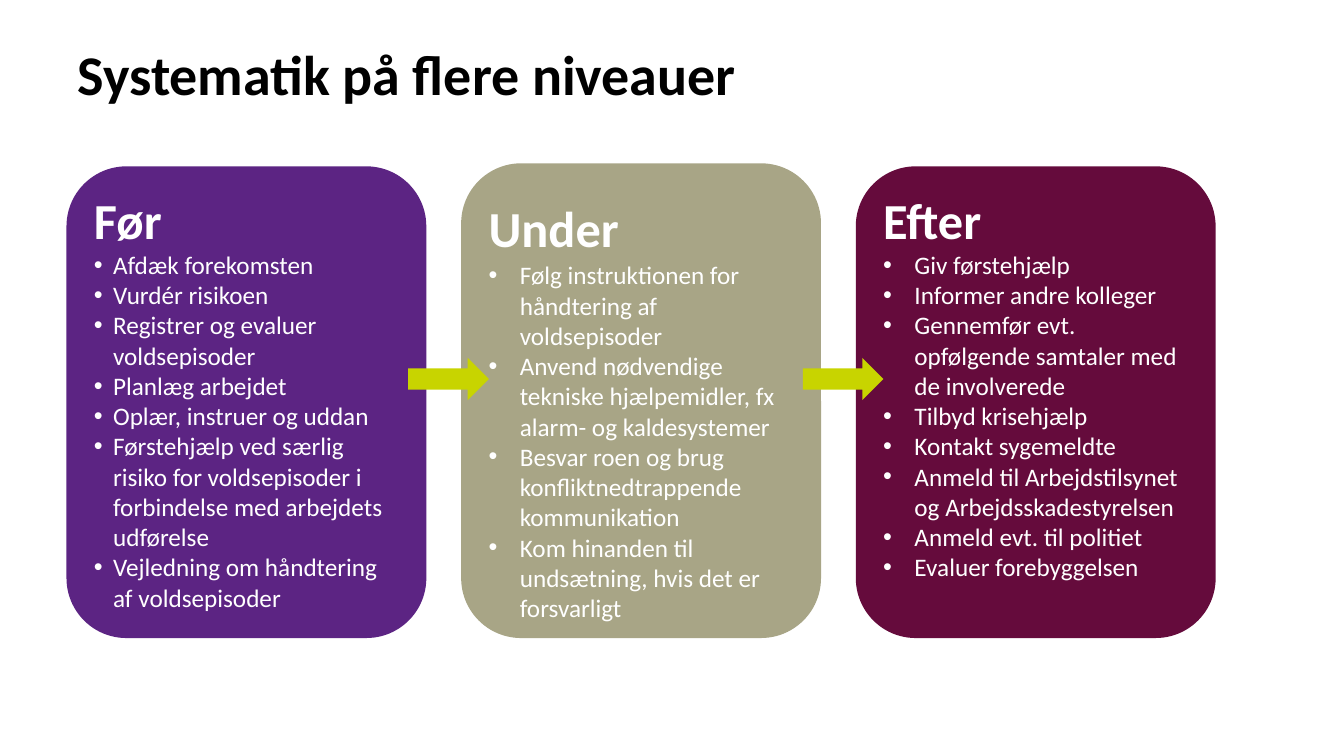
from pptx import Presentation
from pptx.dml.color import RGBColor
from pptx.enum.shapes import MSO_SHAPE
from pptx.enum.text import MSO_ANCHOR, MSO_AUTO_SIZE, PP_ALIGN
from pptx.oxml.ns import qn
from pptx.util import Inches, Pt
from lxml.etree import SubElement

# Column grid, in inches
LEFT, PITCH, CARD_WIDTH, CARD_BOTTOM = 0.66, 3.915, 3.57, 6.33
ARROW_LEFT, ARROW_TOP, ARROW_WIDTH, ARROW_HEIGHT = 4.05, 3.55, 0.8, 0.42

# Heading, fill, top, bullet indent, size of the space after the heading, bullets
PHASES = [
    ("Før", "5C2483", 1.65, 0.19, None, [
        "Afdæk forekomsten",
        "Vurdér risikoen",
        "Registrer og evaluer voldsepisoder",
        "Planlæg arbejdet",
        "Oplær, instruer og uddan",
        "Førstehjælp ved særlig risiko for voldsepisoder i forbindelse med arbejdets udførelse",
        "Vejledning om håndtering af voldsepisoder",
    ]),
    ("Under", "A8A586", 1.62, 0.31, 44, [
        "Følg instruktionen for håndtering af voldsepisoder",
        "Anvend nødvendige tekniske hjælpemidler, fx alarm- og kaldesystemer",
        "Besvar roen og brug konfliktnedtrappende kommunikation",
        "Kom hinanden til undsætning, hvis det er forsvarligt",
    ]),
    ("Efter", "650B3C", 1.65, 0.31, None, [
        "Giv førstehjælp",
        "Informer andre kolleger",
        "Gennemfør evt. opfølgende samtaler med de involverede",
        "Tilbyd krisehjælp",
        "Kontakt sygemeldte",
        "Anmeld til Arbejdstilsynet og Arbejdsskadestyrelsen",
        "Anmeld evt. til politiet",
        "Evaluer forebyggelsen",
    ]),
]


def add_span(para, text, size, color, bold=False):
    span = para.add_run()
    span.text = text
    span.font.name = "Calibri"
    span.font.size = Pt(size)
    span.font.bold = bold
    span.font.color.rgb = RGBColor.from_string(color)


def add_box(page, kind, left, top, width, height, color):
    box = page.shapes.add_shape(kind, Inches(left), Inches(top), Inches(width), Inches(height))
    box.shadow.inherit = False
    box.fill.solid()
    box.fill.fore_color.rgb = RGBColor.from_string(color)
    box.line.fill.background()
    return box


deck = Presentation()
deck.slide_width, deck.slide_height = Inches(13.333), Inches(7.5)
page = deck.slides.add_slide(deck.slide_layouts[5])

# Title
title = page.shapes.title
title.left, title.top, title.width, title.height = map(Inches, (0.67, 0.3, 12, 0.93))
title.text_frame.vertical_anchor = MSO_ANCHOR.MIDDLE
title.text_frame.auto_size = MSO_AUTO_SIZE.NONE
para = title.text_frame.paragraphs[0]
para.alignment = PP_ALIGN.LEFT
para.line_spacing = 0.9
add_span(para, "Systematik på flere niveauer", 40, "000000", bold=True)

# Phase cards
for column, (heading, color, top, indent, space_size, bullets) in enumerate(PHASES):
    card = add_box(page, MSO_SHAPE.ROUNDED_RECTANGLE, LEFT + column * PITCH, top,
                   CARD_WIDTH, CARD_BOTTOM - top, color)
    frame = card.text_frame
    frame.word_wrap = True
    frame.vertical_anchor = MSO_ANCHOR.TOP
    para = frame.paragraphs[0]
    para.alignment = PP_ALIGN.LEFT
    add_span(para, heading, 36, "FFFFFF", bold=True)
    if space_size:
        add_span(para, " ", space_size, "FFFFFF", bold=True)
    for bullet in bullets:
        para = frame.add_paragraph()
        para.alignment = PP_ALIGN.LEFT
        properties = para._p.get_or_add_pPr()
        properties.set("marL", str(Inches(indent)))
        properties.set("indent", str(-Inches(indent)))
        SubElement(properties, qn("a:buFont")).set("typeface", "Arial")
        SubElement(properties, qn("a:buChar")).set("char", "•")
        add_span(para, bullet, 18, "FFFFFF")

# Arrows between neighbouring cards
for gap in range(len(PHASES) - 1):
    add_box(page, MSO_SHAPE.RIGHT_ARROW, ARROW_LEFT + gap * PITCH, ARROW_TOP,
            ARROW_WIDTH, ARROW_HEIGHT, "C8D400")

deck.save("out.pptx")
